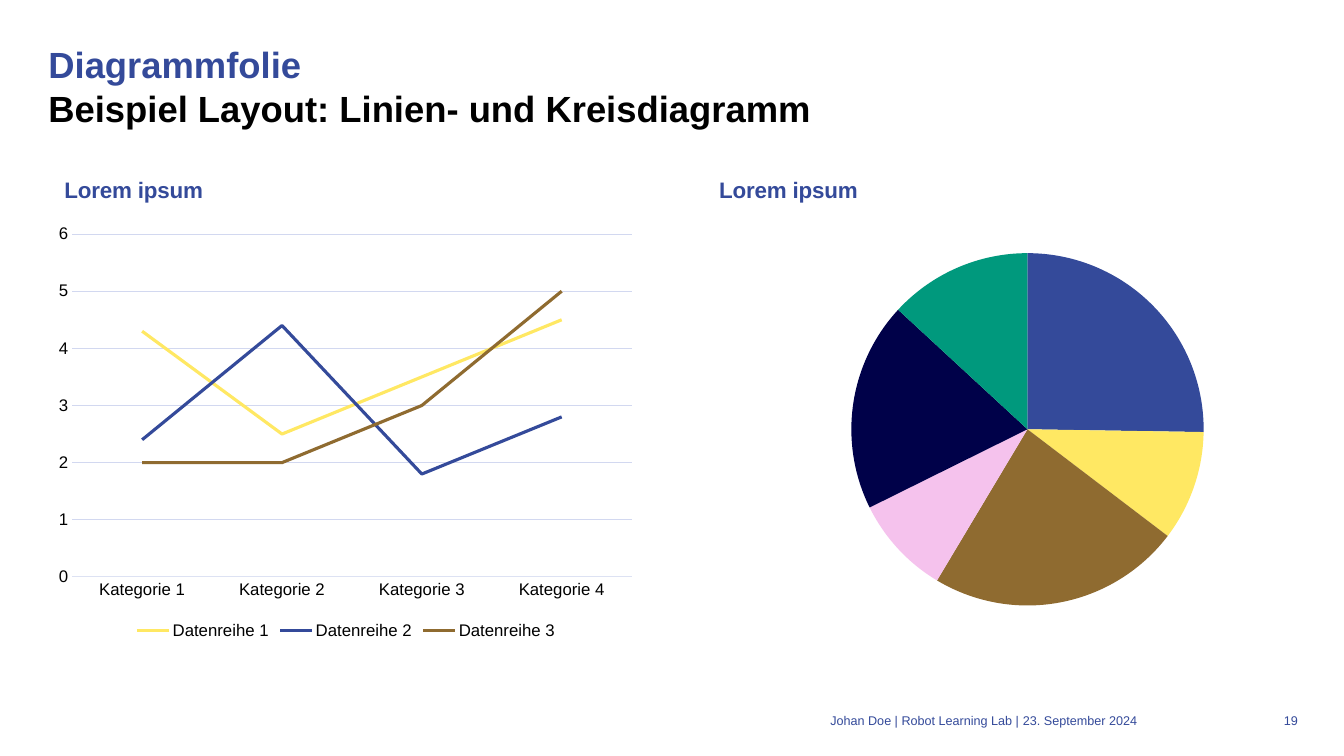
from lxml import etree
from pptx import Presentation
from pptx.chart.data import CategoryChartData
from pptx.dml.color import RGBColor
from pptx.enum import chart as ch, text
from pptx.oxml.ns import qn
from pptx.util import Cm, Pt

# Content
TITLE = ("Diagrammfolie", "Beispiel Layout: Linien- und Kreisdiagramm")
CHART_TITLE = "Lorem ipsum"
LINE_CATS = ["Kategorie 1", "Kategorie 2", "Kategorie 3", "Kategorie 4"]
LINE_SERIES = {
    "Datenreihe 1": (4.3, 2.5, 3.5, 4.5),
    "Datenreihe 2": (2.4, 4.4, 1.8, 2.8),
    "Datenreihe 3": (2, 2, 3, 5),
}
PIE_CATS = ["1", "2", "3", "4", "5", "6"]
PIE_SERIES = {"Series 1": (25, 10, 23, 9, 19, 13)}
FOOTER = [  # text, left, width, left inset, alignment
    ("Johan Doe | Robot Learning Lab |", 8.28, 17.4, 0, text.PP_ALIGN.RIGHT),
    ("23. September 2024", 25.68, 3.99, 0.1, text.PP_ALIGN.LEFT),
    ("19", 31.72, 0.99, 0, text.PP_ALIGN.RIGHT),
]


class Theme:
    font = "Arial"
    blue, black = "344A9A", "000000"
    grid, axis = "D2D8F0", "DDE2F3"
    lines = ["FFE863", "344A9A", "8F6B30"]
    slices = ["344A9A", "FFE863", "8F6B30", "F5C2ED", "000149", "00997D"]
    title, chart_title, label, chart, footer = 26, 16, 12, 10, 9


# Page geometry in cm
PAGE_W, PAGE_H = 33.87, 19.05
MARGIN = 1.22
CONTENT_W = 31.5
CHART_TOP, CHART_W, CHART_H = 4.22, 15, 12
FOOTER_TOP, FOOTER_H = 17.96, 0.51


def rgb(color):
    return RGBColor.from_string(color)


def style(font, size, color, bold=False):
    font.name, font.size, font.bold = Theme.font, Pt(size), bold
    font.color.rgb = rgb(color)


def prepare(tf, left_inset=0):
    tf.margin_left = Cm(left_inset)
    tf.margin_right = tf.margin_top = tf.margin_bottom = 0
    tf.vertical_anchor = text.MSO_ANCHOR.TOP
    tf.auto_size = text.MSO_AUTO_SIZE.NONE
    tf.word_wrap = True


def set_layout(parent, index, target=None, **place):
    """Place a chart part by fractions of the chart's size."""
    for old in parent.findall(qn("c:layout")):
        parent.remove(old)
    layout = etree.Element(qn("c:layout"))
    manual = etree.SubElement(layout, qn("c:manualLayout"))
    values = {"layoutTarget": target} if target else {}
    values |= {"xMode": "edge", "yMode": "edge", **place}
    for name, value in values.items():
        etree.SubElement(manual, qn(f"c:{name}")).set("val", str(value))
    parent.insert(index, layout)


def add_chart(s, kind, left, cats, series, plot):
    data = CategoryChartData()
    data.categories = cats
    for name, values in series.items():
        data.add_series(name, values)
    frame = s.shapes.add_chart(kind, Cm(left), Cm(CHART_TOP), Cm(CHART_W), Cm(CHART_H), data)
    chart = frame.chart
    style(chart.font, Theme.chart, Theme.blue)
    chart.has_title = True
    title = chart.chart_title
    title.include_in_layout = False
    p = title.text_frame.paragraphs[0]
    p.text = CHART_TITLE
    style(p.font, Theme.chart_title, Theme.blue, True)
    set_layout(title._element, 1, x=0.02, y=0.01)
    x, y, w, h = plot
    set_layout(chart._chartSpace.chart.plotArea, 0, "inner", x=x, y=y, w=w, h=h)
    chart.has_legend = False
    return chart


def style_line_chart(chart):
    for series, color in zip(chart.plots[0].series, Theme.lines):
        series.smooth = False
        series.format.line.color.rgb = rgb(color)
        series.format.line.width = Pt(2.25)
    for axis in (chart.category_axis, chart.value_axis):
        axis.major_tick_mark = axis.minor_tick_mark = ch.XL_TICK_MARK.NONE
        style(axis.tick_labels.font, Theme.label, Theme.black)
    chart.category_axis.format.line.color.rgb = rgb(Theme.axis)
    chart.category_axis.format.line.width = Pt(0.75)
    values = chart.value_axis
    values.minimum_scale, values.maximum_scale, values.major_unit = 0, 6, 1
    values.format.line.fill.background()
    values.has_major_gridlines = True
    values.major_gridlines.format.line.color.rgb = rgb(Theme.grid)
    values.major_gridlines.format.line.width = Pt(0.75)
    chart.has_legend = True
    chart.legend.position = ch.XL_LEGEND_POSITION.BOTTOM
    chart.legend.include_in_layout = False
    style(chart.legend.font, Theme.label, Theme.black)


def style_pie_chart(chart):
    plot = chart.plots[0]
    plot.vary_by_categories = True
    for i, color in enumerate(Theme.slices):
        fill = plot.series[0].points[i].format.fill
        fill.solid()
        fill.fore_color.rgb = rgb(color)


def main():
    prs = Presentation()
    prs.slide_width, prs.slide_height = Cm(PAGE_W), Cm(PAGE_H)
    s = prs.slides.add_slide(prs.slide_layouts[5])

    # Title in two colours
    sp = s.shapes.title
    sp.left, sp.top, sp.width, sp.height = Cm(MARGIN), Cm(1.02), Cm(CONTENT_W), Cm(2.69)
    prepare(sp.text_frame)
    p = sp.text_frame.paragraphs[0]
    p.alignment, p.line_spacing = text.PP_ALIGN.LEFT, Pt(32)
    style(p.font, Theme.title, Theme.blue, True)
    for i, (line, color) in enumerate(zip(TITLE, (Theme.blue, Theme.black))):
        if i:
            p.add_line_break()
        r = p.add_run()
        r.text = line
        style(r.font, Theme.title, color, True)

    # Charts at the left and right margins
    right = MARGIN + CONTENT_W - CHART_W
    style_pie_chart(add_chart(s, ch.XL_CHART_TYPE.PIE, right, PIE_CATS, PIE_SERIES,
                              (0.1, 0.18, 0.89, 0.74)))
    style_line_chart(add_chart(s, ch.XL_CHART_TYPE.LINE, MARGIN, LINE_CATS, LINE_SERIES,
                               (0.04, 0.14, 0.94, 0.72)))

    # Footer
    for words, left, width, inset, align in FOOTER:
        tf = s.shapes.add_textbox(Cm(left), Cm(FOOTER_TOP), Cm(width), Cm(FOOTER_H)).text_frame
        prepare(tf, inset)
        p = tf.paragraphs[0]
        p.text, p.alignment = words, align
        style(p.font, Theme.footer, Theme.blue)

    prs.save("out.pptx")


if __name__ == "__main__":
    main()
